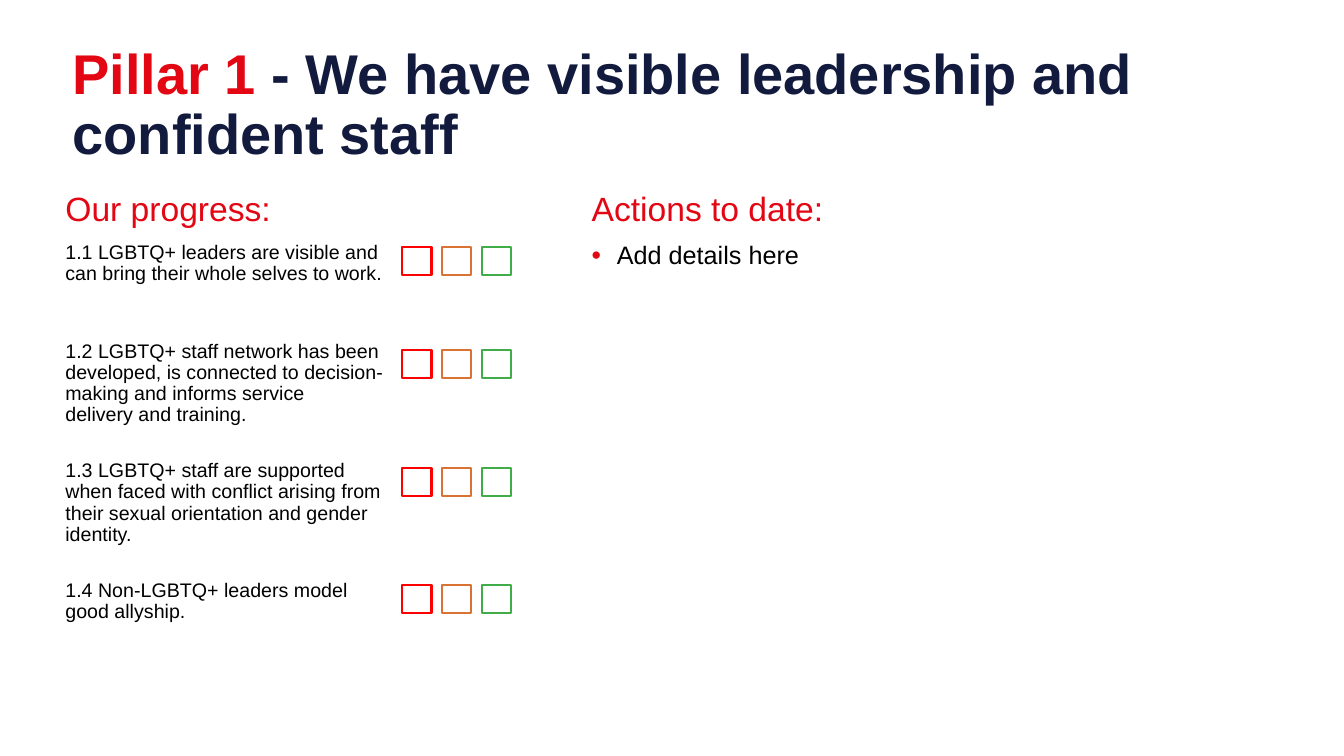
from copy import deepcopy

from lxml.etree import SubElement
from pptx import Presentation
from pptx.dml.color import RGBColor
from pptx.enum.shapes import MSO_SHAPE
from pptx.enum.text import MSO_ANCHOR, MSO_AUTO_SIZE, PP_ALIGN
from pptx.oxml.ns import qn
from pptx.util import Inches, Pt

CELL = Inches(0.1)
RED, NAVY, BLACK = "E30613", "121A3D", "000000"
RATINGS = ["FF0000", "D87333", "41AD49"]
RATING_LEFT, RATING_PITCH = 39.9, 3.95
BODY_TOP, BODY_HEIGHT = 18.6, 49.5
GOALS = [
    (24.5, 30, ["1.1 LGBTQ+ leaders are visible and",
                "can bring their whole selves to work."]),
    (34.7, 15, ["1.2 LGBTQ+ staff network has been",
                "developed, is connected to decision-",
                "making and informs service",
                "delivery and training."]),
    (46.4, 15, ["1.3 LGBTQ+ staff are supported",
                "when faced with conflict arising from",
                "their sexual orientation and gender",
                "identity."]),
    (58, 0, ["1.4 Non-LGBTQ+ leaders model",
             "good allyship."]),
]


def cells(*counts):
    """Turn counts of grid cells into lengths."""
    return [round(count * CELL) for count in counts]


def color(hex_string):
    """Turn a hex string into a colour."""
    return RGBColor.from_string(hex_string)


def apply(target, formats):
    """Set each attribute named in a dict of format values."""
    for attribute, value in formats.items():
        setattr(target, attribute, value)


def add_run(paragraph, text, size, hue, bold=False):
    """Append a formatted run to a paragraph."""
    run = paragraph.add_run()
    run.text = text
    apply(run.font, {"name": "Arial", "size": Pt(size), "bold": bold})
    run.font.color.rgb = color(hue)
    return run


def add_lines(paragraph, lines, size, hue):
    """Fill a paragraph with lines parted by breaks of the same size."""
    for index, line in enumerate(lines):
        if index:
            paragraph.add_line_break()
            line_break = paragraph._p[-1]
        run = add_run(paragraph, line, size, hue)
        if index:
            line_break.append(deepcopy(run._r.rPr))


def space(paragraph, after=0):
    """Give a paragraph the spacing of the body text."""
    apply(paragraph, {"line_spacing": 0.9, "space_before": Pt(10),
                      "space_after": Pt(after)})


def add_section(slide, left, width, heading):
    """Add a body column with its heading and return its text frame."""
    section = slide.shapes.add_textbox(*cells(left, BODY_TOP, width, BODY_HEIGHT))
    frame = section.text_frame
    apply(frame, {"word_wrap": True, "auto_size": MSO_AUTO_SIZE.NONE})
    space(frame.paragraphs[0])
    add_run(frame.paragraphs[0], heading, 24, RED)
    return frame


def add_bullet(frame, text):
    """Add a paragraph with a red bullet and a hanging indent."""
    paragraph = frame.add_paragraph()
    space(paragraph)
    add_run(paragraph, text, 18, BLACK)
    properties = paragraph._p.get_or_add_pPr()
    properties.set("marL", str(Inches(0.25)))
    properties.set("indent", str(-Inches(0.25)))
    bullet_color = SubElement(properties, qn("a:buClr"))
    SubElement(bullet_color, qn("a:srgbClr"), val=RED)
    SubElement(properties, qn("a:buSzPct"), val="107000")
    SubElement(properties, qn("a:buFont"), typeface="Arial")
    SubElement(properties, qn("a:buChar"), char="•")


def add_rating(slide, top):
    """Add a row of red, amber and green tick boxes."""
    for column, hue in enumerate(RATINGS):
        left = RATING_LEFT + column * RATING_PITCH
        tick_box = slide.shapes.add_shape(
            MSO_SHAPE.RECTANGLE, *cells(left, top, 2.9, 2.8))
        tick_box.shadow.inherit = False
        tick_box.fill.background()
        tick_box.line.color.rgb = color(hue)
        tick_box.line.width = Pt(1.5)


def set_title(slide):
    """Place the title and fill it in two colours."""
    title = slide.shapes.title
    left, top, width, height = cells(6.2, 3.3, 118.1, 14.5)
    apply(title, {"left": left, "top": top, "width": width, "height": height})
    apply(title.text_frame, {"vertical_anchor": MSO_ANCHOR.MIDDLE,
                             "word_wrap": True,
                             "auto_size": MSO_AUTO_SIZE.NONE})
    headline = title.text_frame.paragraphs[0]
    apply(headline, {"alignment": PP_ALIGN.LEFT, "line_spacing": 0.9,
                     "space_before": Pt(0)})
    add_run(headline, "Pillar 1 ", 40, RED, True)
    add_run(headline, "- We have visible leadership and confident staff",
            40, NAVY, True)


def main():
    """Build the slide and save it."""
    deck = Presentation()
    apply(deck, {"slide_width": Inches(13.33), "slide_height": Inches(7.5)})
    slide = deck.slides.add_slide(deck.slide_layouts[5])
    set_title(slide)
    actions = add_section(slide, 57.7, 66, "Actions to date:")
    add_bullet(actions, "Add details here")
    progress = add_section(slide, 5.5, 46.8, "Our progress:")
    for top, gap, lines in GOALS:
        goal = progress.add_paragraph()
        space(goal, gap)
        add_lines(goal, lines, 14, BLACK)
        add_rating(slide, top)
    deck.save("out.pptx")


if __name__ == "__main__":
    main()
